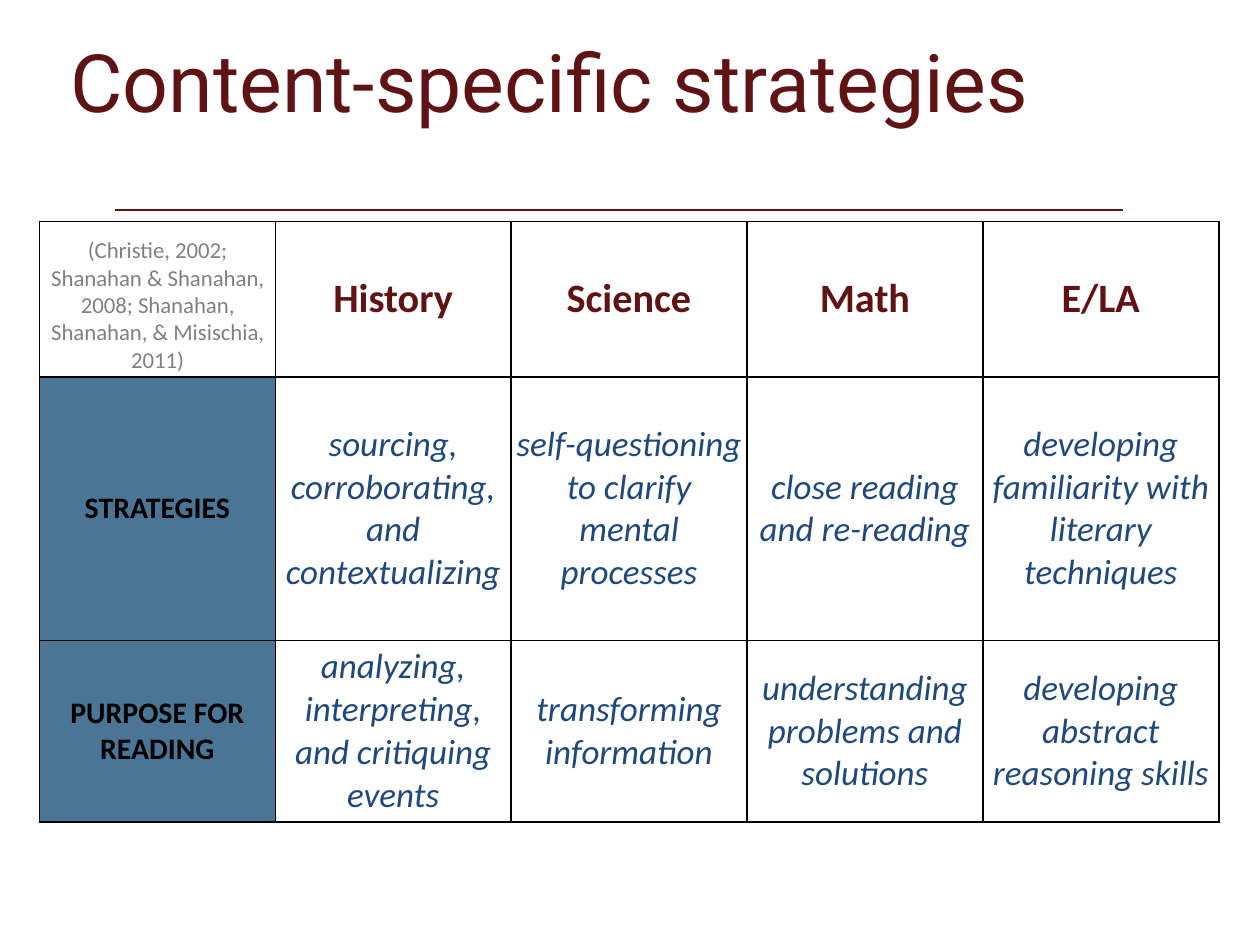
from dataclasses import dataclass

import pptx
import pptx.dml.color
import pptx.enum.shapes
import pptx.enum.text
import pptx.oxml
import pptx.oxml.ns
import pptx.util

Pt = pptx.util.Pt
RGB = pptx.dml.color.RGBColor.from_string
ANCHOR = pptx.enum.text.MSO_ANCHOR


@dataclass(frozen=True)
class Theme:
    title_font: str = "Roboto"
    body_font: str = "Calibri"
    accent: str = "601314"
    body: str = "1F497D"
    label: str = "000000"
    label_fill: str = "4A7594"
    cell_fill: str = "FFFFFF"
    border: str = "000000"
    muted: str = "808080"
    title_size: float = 46
    head_size: float = 23
    body_size: float = 20
    label_size: float = 17
    cite_size: float = 13


def write(tf, text, *, font, size, color, bold=False, italic=False,
          anchor=ANCHOR.MIDDLE):
    tf.word_wrap = True
    tf.vertical_anchor = anchor
    p = tf.paragraphs[0]
    p.alignment = pptx.enum.text.PP_ALIGN.CENTER
    r = p.add_run()
    r.text = text
    r.font.name = font
    r.font.size = Pt(size)
    r.font.color.rgb = RGB(color)
    r.font.bold = bold
    r.font.italic = italic


def set_borders(cell, color, width):
    tc_pr = cell._tc.get_or_add_tcPr()
    for side in ("lnL", "lnR", "lnT", "lnB"):
        tc_pr.append(pptx.oxml.parse_xml(
            f'<a:{side} {pptx.oxml.ns.nsdecls("a")} w="{Pt(width)}">'
            f'<a:solidFill><a:srgbClr val="{color}"/></a:solidFill></a:{side}>'))


class SlideBuilder:
    """Holds the theme and the slide being built; lengths are in points."""

    def __init__(self, slide, theme):
        self.slide = slide
        self.theme = theme

    def title(self, text, x, y, w, h):
        sp = self.slide.shapes.title
        sp.left, sp.top, sp.width, sp.height = Pt(x), Pt(y), Pt(w), Pt(h)
        sp.text_frame.auto_size = pptx.enum.text.MSO_AUTO_SIZE.NONE
        write(sp.text_frame, text, font=self.theme.title_font,
              size=self.theme.title_size, color=self.theme.accent,
              anchor=ANCHOR.TOP)

    def rule(self, x1, x2, y, width):
        line = self.slide.shapes.add_connector(
            pptx.enum.shapes.MSO_CONNECTOR.STRAIGHT, Pt(x1), Pt(y), Pt(x2), Pt(y))
        line.line.color.rgb = RGB(self.theme.accent)
        line.line.width = Pt(width)
        line._element.spPr.append(pptx.oxml.parse_xml(
            f'<a:effectLst {pptx.oxml.ns.nsdecls("a")}/>'))

    def cell_style(self, row, col):
        t = self.theme
        if row == 0:
            return dict(size=t.head_size, color=t.accent, bold=True)
        if col == 0:
            return dict(size=t.label_size, color=t.label, bold=True)
        return dict(size=t.body_size, color=t.body, italic=True)

    def table(self, rows, x, y, col_width, row_heights, margin):
        t = self.theme
        n_cols = len(rows[0])
        table = self.slide.shapes.add_table(
            len(rows), n_cols, Pt(x), Pt(y),
            Pt(col_width * n_cols), Pt(sum(row_heights))).table
        table.first_row = table.horz_banding = False
        for col in table.columns:
            col.width = Pt(col_width)
        for i, (texts, height) in enumerate(zip(rows, row_heights)):
            table.rows[i].height = Pt(height)
            for j, text in enumerate(texts):
                cell = table.cell(i, j)
                cell.margin_left = cell.margin_right = Pt(margin)
                cell.margin_top = cell.margin_bottom = Pt(margin)
                cell.vertical_anchor = ANCHOR.MIDDLE
                set_borders(cell, t.border, 1)
                cell.fill.solid()
                cell.fill.fore_color.rgb = RGB(
                    t.label_fill if i and not j else t.cell_fill)
                if text:
                    write(cell.text_frame, text, font=t.body_font,
                          anchor=None, **self.cell_style(i, j))

    def citation(self, text, x, y, w, h):
        tf = self.slide.shapes.add_textbox(Pt(x), Pt(y), Pt(w), Pt(h)).text_frame
        tf.margin_left = tf.margin_right = tf.margin_top = tf.margin_bottom = 0
        write(tf, text, font=self.theme.body_font,
              size=self.theme.cite_size, color=self.theme.muted)


STRATEGY_ROWS = [
    ["", "History", "Science", "Math", "E/LA"],
    ["STRATEGIES",
     "sourcing, corroborating, and contextualizing",
     "self-questioning to clarify mental processes",
     "close reading and re-reading",
     "developing familiarity with literary techniques"],
    ["PURPOSE FOR READING",
     "analyzing, interpreting, and critiquing events",
     "transforming information",
     "understanding problems and solutions",
     "developing abstract reasoning skills"],
]


def main():
    prs = pptx.Presentation()
    prs.slide_width, prs.slide_height = Pt(720), Pt(540)
    slide = prs.slides.add_slide(prs.slide_layouts[5])
    s = SlideBuilder(slide, Theme())
    s.rule(66, 642, 120, 1.5)
    s.title("Content-specific strategies", 22.5, 14.4, 582.5, 135.4)
    s.table(STRATEGY_ROWS, 22.5, 126.5, 134.8, [88.8, 150.6, 101.8], 2.88)
    s.citation("(Christie, 2002; Shanahan & Shanahan, 2008; "
               "Shanahan, Shanahan, & Misischia, 2011)", 24, 132, 132, 84)
    prs.save("out.pptx")


if __name__ == "__main__":
    main()
